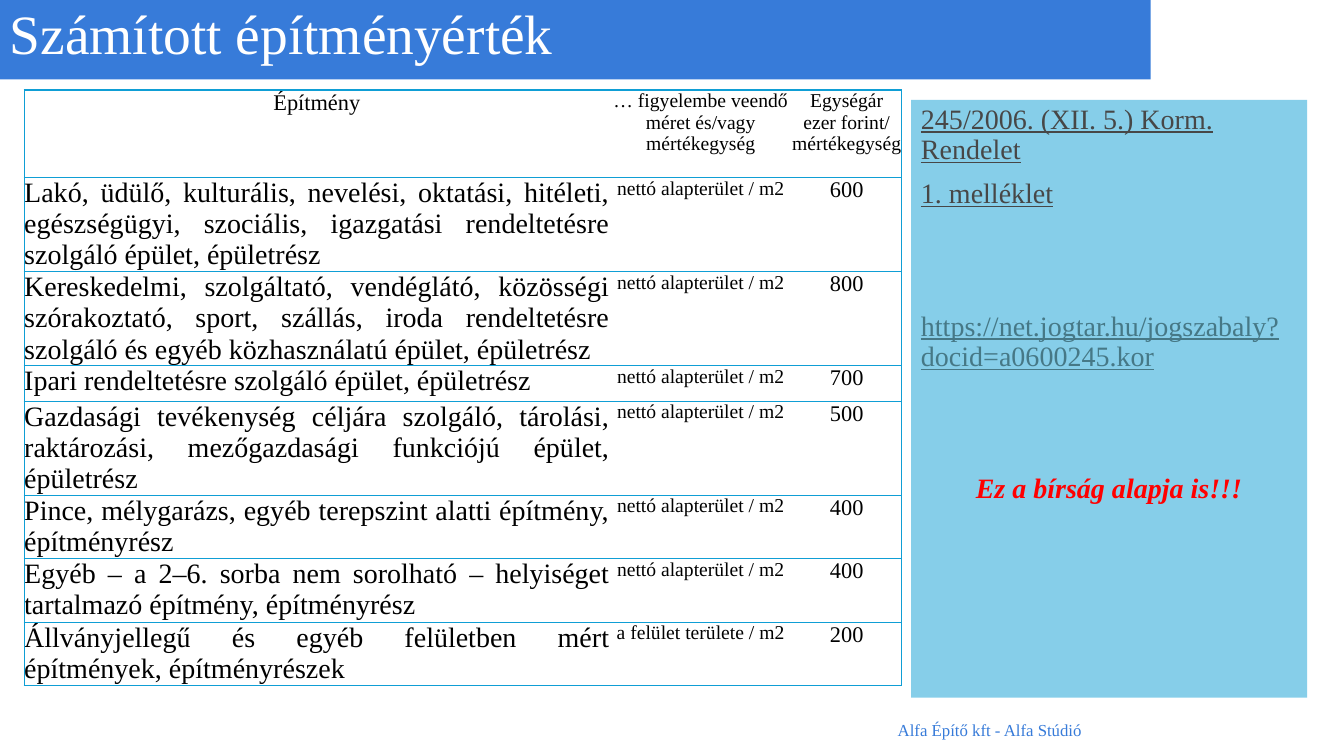
from dataclasses import dataclass

from lxml.etree import SubElement
from pptx import Presentation
from pptx.dml.color import RGBColor as Rgb
from pptx.enum.shapes import MSO_SHAPE as Shape
from pptx.enum.text import MSO_ANCHOR as Anchor, PP_ALIGN as Align
from pptx.oxml.ns import qn
from pptx.util import Cm, Pt


@dataclass(frozen=True)
class Theme:
    font: str = "Times New Roman"
    banner: str = "377BD9"
    accent: str = "0F9ED5"
    white: str = "FFFFFF"
    black: str = "000000"
    gray: str = "474747"
    link: str = "467886"
    alert: str = "FF0000"
    title: float = 39.6
    body: float = 20
    value: float = 16
    unit: float = 14
    footer: float = 12


def curve(start, first, second, end, steps=16):
    """Points along a cubic curve, without its start."""
    points = []
    for step in range(1, steps + 1):
        t = step / steps
        weights = ((1 - t) ** 3, 3 * t * (1 - t) ** 2, 3 * t * t * (1 - t), t ** 3)
        points.append(tuple(sum(w * p[axis] for w, p in zip(weights, (start, first, second, end)))
                            for axis in (0, 1)))
    return points


class SlideBuilder:
    def __init__(self, slide, theme):
        self.slide = slide
        self.theme = theme

    def add_text(self, para, text, size, color, align=Align.LEFT, **style):
        para.alignment = align
        for index, line in enumerate(text.split("\n")):
            if index:
                para.add_line_break()
            span = para.add_run()
            span.text = line
            font = span.font
            font.name, font.size = self.theme.font, Pt(size)
            font.color.rgb = Rgb.from_string(color)
            for name, value in style.items():
                setattr(font, name, value)

    def paint(self, shape, color, alpha=None):
        shape.shadow.inherit = False
        shape.fill.solid()
        shape.fill.fore_color.rgb = Rgb.from_string(color)
        shape.line.fill.background()
        if alpha:
            tone = shape.element.spPr.find(".//" + qn("a:srgbClr"))
            SubElement(tone, qn("a:alpha"), val=str(alpha * 1000))

    def outline(self, points, color):
        builder = self.slide.shapes.build_freeform(*points[0], scale=Cm(1))
        builder.add_line_segments(points[1:], close=True)
        self.paint(builder.convert_to_shape(), color)

    def label(self, place, text, size, color, align=Align.LEFT, spacing=1.0):
        box = self.slide.shapes.add_textbox(*map(Cm, place))
        frame = box.text_frame
        frame.word_wrap = True
        frame.vertical_anchor = Anchor.MIDDLE
        para = frame.paragraphs[0]
        para.line_spacing = spacing
        self.add_text(para, text, size, color, align)

    def panel(self, place, color, alpha, entries, spacing):
        box = self.slide.shapes.add_shape(Shape.RECTANGLE, *map(Cm, place))
        self.paint(box, color, alpha)
        frame = box.text_frame
        frame.word_wrap = True
        frame.vertical_anchor = Anchor.TOP
        for index, (text, before, style) in enumerate(entries):
            para = frame.add_paragraph() if index else frame.paragraphs[0]
            para.line_spacing = spacing
            if before:
                para.space_before = Pt(before)
            self.add_text(para, text, self.theme.body, **style)

    def border(self, cell, sides):
        props = cell._tc.get_or_add_tcPr()
        for position, side in enumerate(("L", "R", "T", "B")):
            shown = side in sides
            line = props.makeelement(qn("a:ln" + side), {"w": str(Pt(1) if shown else 0)})
            fill = SubElement(line, qn("a:solidFill" if shown else "a:noFill"))
            if shown:
                SubElement(fill, qn("a:srgbClr"), val=self.theme.accent)
            props.insert(position, line)

    def table(self, place, widths, heights, rows, formats):
        frame = self.slide.shapes.add_table(len(rows), len(widths), *map(Cm, place))
        grid = frame.table
        grid.first_row = grid.horz_banding = False
        for column, width in zip(grid.columns, widths):
            column.width = Cm(width)
        for row, height in zip(grid.rows, heights):
            row.height = Cm(height)
        edges = ("LTB", "TB", "RTB")
        for r, texts in enumerate(rows):
            for c, text in enumerate(texts):
                cell = grid.cell(r, c)
                cell.margin_left = cell.margin_right = 0
                cell.margin_top = cell.margin_bottom = 0
                cell.fill.solid()
                cell.fill.fore_color.rgb = Rgb.from_string(self.theme.white)
                self.border(cell, edges[c])
                size, align = formats[min(r, 1)][c]
                self.add_text(cell.text_frame.paragraphs[0], text, size, self.theme.black, align)


def main():
    theme = Theme()
    deck = Presentation()
    deck.slide_width, deck.slide_height = Cm(33.87), Cm(19.05)
    page = SlideBuilder(deck.slides.add_slide(deck.slide_layouts[6]), theme)

    # Title banner with rounded right end
    right, bottom = 29.16, 1.85
    page.outline(
        [(0, 0), (28.9, 0)]
        + curve((28.9, 0), (29.08, 0), (right, 0.05), (right, 0.2))
        + [(right, 0.48)]
        + curve((right, 0.48), (right, 1.27), (28.65, bottom), (27.76, bottom))
        + [(0, bottom)],
        theme.banner)

    # Price table
    area = "nettó alapterület / m2"
    rows = [
        ("Építmény", "… figyelembe veendő méret és/vagy mértékegység",
         "Egységár ezer forint/\nmértékegység"),
        ("Lakó, üdülő, kulturális, nevelési, oktatási, hitéleti, egészségügyi, szociális, "
         "igazgatási rendeltetésre szolgáló épület, épületrész", area, "600"),
        ("Kereskedelmi, szolgáltató, vendéglátó, közösségi szórakoztató, sport, szállás, iroda "
         "rendeltetésre szolgáló és egyéb közhasználatú épület, épületrész", area, "800"),
        ("Ipari rendeltetésre szolgáló épület, épületrész", area, "700"),
        ("Gazdasági tevékenység céljára szolgáló, tárolási, raktározási, mezőgazdasági "
         "funkciójú épület, épületrész", area, "500"),
        ("Pince, mélygarázs, egyéb terepszint alatti építmény, építményrész", area, "400"),
        ("Egyéb – a 2–6. sorba nem sorolható – helyiséget tartalmazó építmény, építményrész",
         area, "400"),
        ("Állványjellegű és egyéb felületben mért építmények, építményrészek",
         "a felület területe / m2", "200"),
    ]
    formats = [
        [(theme.value, Align.CENTER), (theme.unit, Align.CENTER), (theme.unit, Align.CENTER)],
        [(theme.body, Align.JUSTIFY), (theme.unit, Align.CENTER), (theme.value, Align.CENTER)],
    ]
    heights = (2.21, 2.37, 2.37, 0.89, 2.37, 1.6, 1.6, 1.6)
    page.table((0.61, 2.27, 22.11, sum(heights)), (14.75, 4.6, 2.76), heights, rows, formats)

    # Legal reference panel
    reference = {"color": theme.gray, "underline": True}
    page.panel((22.96, 2.52, 9.98, 15.06), theme.accent, 50, [
        ("245/2006. (XII. 5.) Korm. Rendelet", 0, reference),
        ("1. melléklet", 10, reference),
        ("https://net.jogtar.hu/jogszabaly?docid=a0600245.kor", 73,
         {"color": theme.link, "underline": True}),
        ("Ez a bírság alapja is!!!", 73,
         {"color": theme.alert, "align": Align.CENTER, "bold": True, "italic": True}),
    ], 0.9)

    # Footer and title
    page.label((20.22, 17.88, 9.45, 1.02), "Alfa Építő kft - Alfa Stúdió",
               theme.footer, theme.banner, Align.CENTER)
    page.label((0, 0, 28.19, 1.85), "Számított építményérték",
               theme.title, theme.white, spacing=0.9)

    deck.save("out.pptx")


if __name__ == "__main__":
    main()
